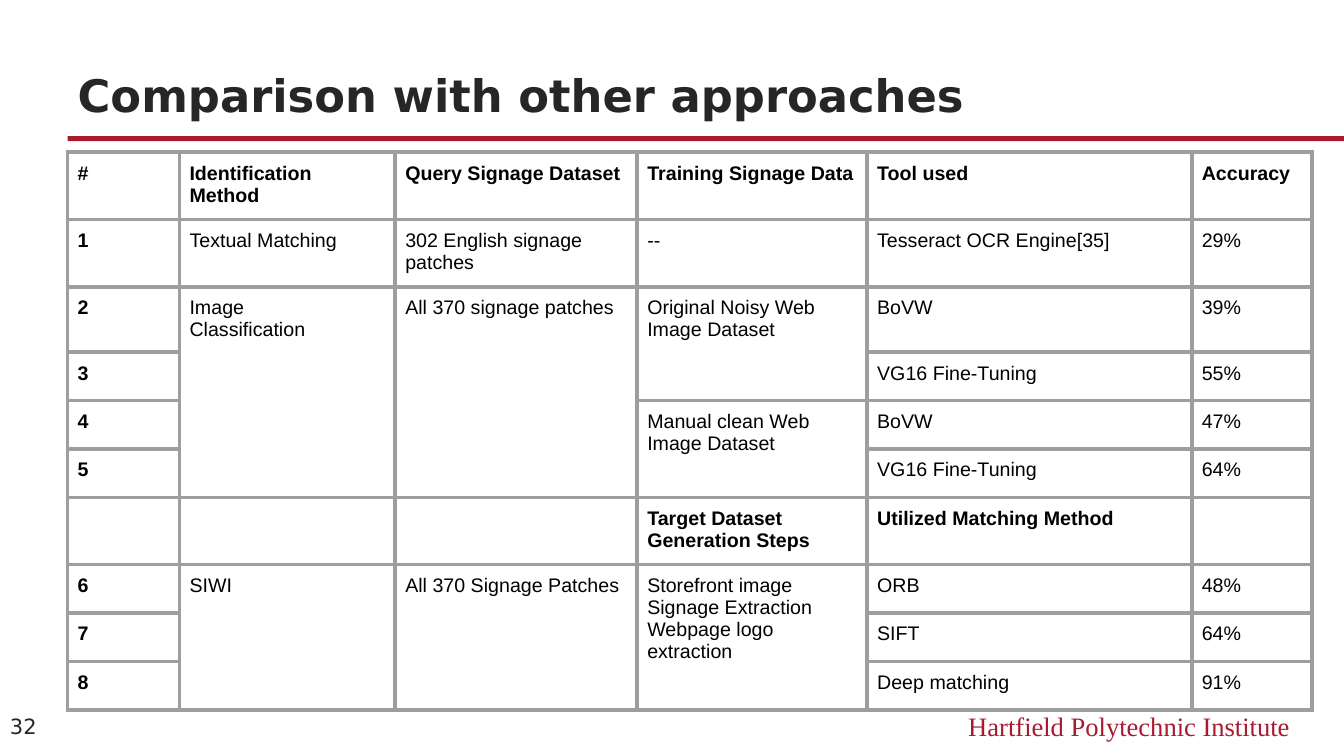
"""Builds a slide that compares signage identification approaches in a table."""
from lxml import etree
from pptx import Presentation
from pptx.dml.color import RGBColor
from pptx.enum.shapes import MSO_SHAPE
from pptx.enum.text import MSO_ANCHOR, MSO_AUTO_SIZE, PP_ALIGN
from pptx.oxml.ns import qn
from pptx.util import Inches, Pt

CRIMSON = RGBColor(0xAB, 0x19, 0x2D)
CHARCOAL = RGBColor(0x26, 0x26, 0x26)
BLACK = RGBColor(0, 0, 0)
GREY = RGBColor(0x9E, 0x9E, 0x9E)

WIDTH, HEIGHT = Inches(13.33), Inches(7.5)
MARGIN = Inches(0.67)
COLUMNS = [1.11, 2.14, 2.4, 2.28, 3.22, 1.19]
TALL, LOW = 0.65, 0.48
ROW_HEIGHTS = [TALL] * 3 + [LOW] * 3 + [TALL] + [LOW] * 3
HEADER_ROWS = (0, 6)
ROWS = [
    ["#", "Identification Method", "Query Signage Dataset",
     "Training Signage Data", "Tool used", "Accuracy"],
    ["1", "Textual Matching", "302 English signage patches", "--",
     "Tesseract OCR Engine[35]", "29%"],
    ["2", "Image\nClassification", "All 370 signage patches",
     "Original Noisy Web Image Dataset", "BoVW", "39%"],
    ["3", "", "", "", "VG16 Fine-Tuning", "55%"],
    ["4", "", "", "Manual clean Web Image Dataset", "BoVW", "47%"],
    ["5", "", "", "", "VG16 Fine-Tuning", "64%"],
    ["", "", "", "Target Dataset Generation Steps",
     "Utilized Matching Method", ""],
    ["6", "SIWI", "All 370 Signage Patches",
     "Storefront image\nSignage Extraction\nWebpage logo extraction",
     "ORB", "48%"],
    ["7", "", "", "", "SIFT", "64%"],
    ["8", "", "", "", "Deep matching", "91%"],
]
MERGES = [(2, 1, 4), (2, 2, 4), (2, 3, 2), (4, 3, 2),
          (7, 1, 3), (7, 2, 3), (7, 3, 3)]


def write(tf, text, font, size, color, bold=False, align=PP_ALIGN.LEFT):
    """Fill a text frame with uniformly formatted paragraphs."""
    tf.text = text
    tf.word_wrap = True
    for p in tf.paragraphs:
        p.alignment = align
        p.font.size = Pt(size)
        for r in p.runs:
            r.font.name, r.font.size, r.font.bold = font, Pt(size), bold
            r.font.color.rgb = color


def add_title(s, text):
    """Place the slide title above the rule."""
    sp = s.shapes.title
    sp.left, sp.top = MARGIN, int(HEIGHT * 0.05)
    sp.width, sp.height = int(WIDTH * 0.9), int(HEIGHT * 0.118)
    tf = sp.text_frame
    write(tf, text, "DejaVu Sans", 32, CHARCOAL, bold=True)
    tf.auto_size = MSO_AUTO_SIZE.NONE
    tf.vertical_anchor = MSO_ANCHOR.BOTTOM


def add_rule(s):
    """Draw the coloured bar from the margin to the right edge."""
    sp = s.shapes.add_shape(MSO_SHAPE.RECTANGLE, MARGIN, int(HEIGHT * 0.18),
                            WIDTH - MARGIN, Inches(0.05))
    sp.shadow.inherit = False
    sp.fill.solid()
    sp.fill.fore_color.rgb = CRIMSON
    sp.line.fill.background()


def add_label(s, box, text, font, size, color, align, anchor):
    """Add a footer text box given as shares of the slide's size."""
    x, y, w, h = box
    sp = s.shapes.add_textbox(int(WIDTH * x), int(HEIGHT * y),
                              int(WIDTH * w), int(HEIGHT * h))
    write(sp.text_frame, text, font, size, color, align=align)
    sp.text_frame.vertical_anchor = anchor


def set_borders(cell):
    """Give a cell the same grey line on all four sides."""
    tc_pr = cell._tc.get_or_add_tcPr()
    for side in ("a:lnL", "a:lnR", "a:lnT", "a:lnB"):
        ln = etree.SubElement(tc_pr, qn(side), w=str(Pt(3)))
        fill = etree.SubElement(ln, qn("a:solidFill"))
        etree.SubElement(fill, qn("a:srgbClr"), val=str(GREY))


def add_comparison(s):
    """Add the comparison table with its vertically merged cells."""
    frame = s.shapes.add_table(len(ROWS), len(COLUMNS), MARGIN, Inches(1.51),
                               Inches(sum(COLUMNS)), Inches(sum(ROW_HEIGHTS)))
    table = frame.table
    table.first_row = table.horz_banding = False
    for column, width in zip(table.columns, COLUMNS):
        column.width = Inches(width)
    for i, (row, height) in enumerate(zip(table.rows, ROW_HEIGHTS)):
        row.height = Inches(height)
        for j, cell in enumerate(row.cells):
            cell.margin_left = cell.margin_right = Inches(0.1)
            cell.margin_top = cell.margin_bottom = Inches(0.1)
            set_borders(cell)
            cell.fill.background()
            write(cell.text_frame, ROWS[i][j], "Arial", 14, BLACK,
                  bold=j == 0 or i in HEADER_ROWS)
    for i, j, span in MERGES:
        table.cell(i, j).merge(table.cell(i + span - 1, j))


def main():
    """Build and save the slide."""
    prs = Presentation()
    prs.slide_width, prs.slide_height = WIDTH, HEIGHT
    s = prs.slides.add_slide(prs.slide_layouts[5])
    add_rule(s)
    add_label(s, (0.6, 0.933, 0.367, 0.053), "Hartfield Polytechnic Institute",
              "Times New Roman", 19, CRIMSON, PP_ALIGN.RIGHT, MSO_ANCHOR.TOP)
    add_title(s, "Comparison with other approaches")
    add_label(s, (0, 0.932, 0.05, 0.057), "32", "DejaVu Sans", 15, CHARCOAL,
              PP_ALIGN.LEFT, MSO_ANCHOR.MIDDLE)
    add_comparison(s)
    prs.save("out.pptx")


if __name__ == "__main__":
    main()
